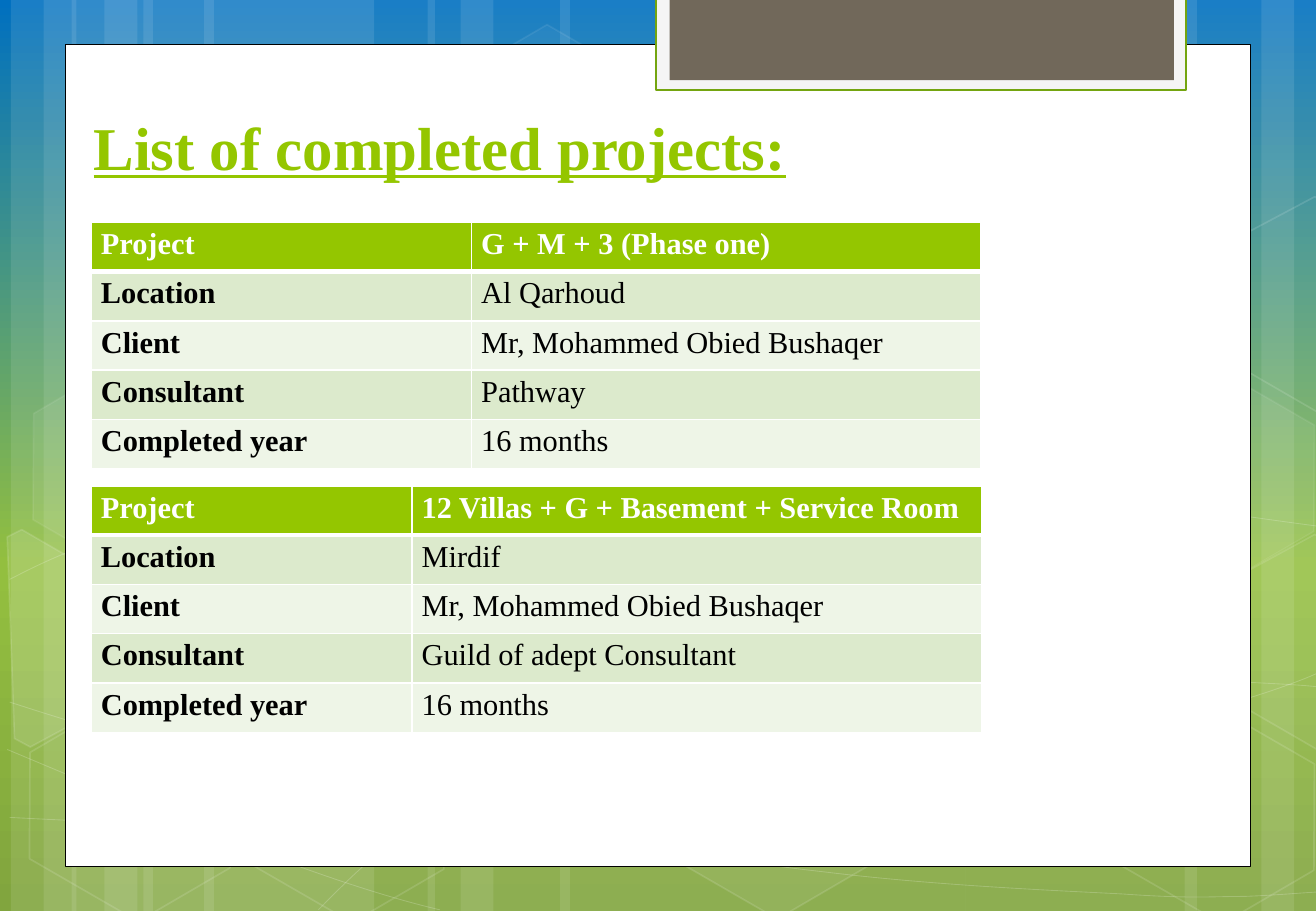
from copy import deepcopy
from dataclasses import dataclass

from lxml import etree
from pptx import Presentation
from pptx import util as u
from pptx.dml import color as dml
from pptx.enum import shapes, text
from pptx.oxml import ns

PX = 9144


@dataclass(frozen=True)
class Theme:
    font: str = "Times New Roman"
    title_size: int = 36
    table_size: int = 18
    accent: str = "94C600"
    ink: str = "000000"
    white: str = "FFFFFF"
    frame: str = "F5F5F5"
    frame_edge: str = "74A510"
    tab: str = "71685A"
    bands: tuple = ("EEF5E7", "DCEACC")
    sky: tuple = ((0, "0070C0"), (0.62, "93BF3F"), (1, "81A53E"))


def px(*values):
    return [value * PX for value in values]


class SlideMaker:
    def __init__(self, theme, page):
        self.theme = theme
        self.page = page

    def background(self):
        fill = self.page.background.fill
        fill.gradient()
        fill.gradient_angle = 270
        stops = self.page.element.xpath(".//a:gsLst")[0]
        stops.append(deepcopy(stops[-1]))
        for stop, (position, rgb) in zip(fill.gradient_stops, self.theme.sky):
            stop.position = position
            stop.color.rgb = dml.RGBColor.from_string(rgb)

    def paint(self, shape, fill=None, alpha=100, line=None, width=1, line_alpha=100):
        shape.shadow.inherit = False
        places = ((shape.fill, fill, alpha, "a:solidFill"),
                  (shape.line.fill, line, line_alpha, "a:ln/a:solidFill"))
        for paint, rgb, opacity, place in places:
            if rgb is None:
                paint.background()
                continue
            paint.solid()
            paint.fore_color.rgb = dml.RGBColor.from_string(rgb)
            if opacity < 100:
                node = shape.element.xpath(f"./p:spPr/{place}/a:srgbClr")[0]
                etree.SubElement(node, ns.qn("a:alpha"), val=str(opacity * 1000))
        if line:
            shape.line.width = u.Pt(width)

    def rectangle(self, bounds, **look):
        box = self.page.shapes.add_shape(shapes.MSO_SHAPE.RECTANGLE, *px(*bounds))
        self.paint(box, **look)

    def hexagon(self, left, top, **look):
        box = self.page.shapes.add_shape(shapes.MSO_SHAPE.HEXAGON, *px(left, top, 190, 152))
        box.adjustments[0] = 0.285
        box.rotation = 30
        self.paint(box, **look)

    def outline(self, points, close, **look):
        first, *rest = points
        builder = self.page.shapes.build_freeform(*first, scale=PX)
        builder.add_line_segments(rest, close=close)
        shape = builder.convert_to_shape()
        self.paint(shape, **look)
        return shape

    def curve(self, points, **look):
        shape = self.outline(points, False, **look)
        route = shape.element.xpath(".//a:path")[0]
        for index, step in enumerate(route.xpath("./a:lnTo")):
            if index % 3 == 0:
                bend = etree.SubElement(route, ns.qn("a:cubicBezTo"))
            bend.append(step[0])
            route.remove(step)

    def style(self, font, rgb, **values):
        for name, value in {"name": self.theme.font, **values}.items():
            setattr(font, name, value)
        font.color.rgb = dml.RGBColor.from_string(rgb)

    def title(self, words, bounds):
        box = self.page.shapes.title
        box.element.getparent().append(box.element)
        for name, value in zip(("left", "top", "width", "height"), px(*bounds)):
            setattr(box, name, value)
        frame = box.text_frame
        frame.text = words
        layout = {"vertical_anchor": text.MSO_ANCHOR.BOTTOM, "word_wrap": True,
                  "auto_size": text.MSO_AUTO_SIZE.NONE}
        for name, value in layout.items():
            setattr(frame, name, value)
        para = frame.paragraphs[0]
        para.alignment = text.PP_ALIGN.LEFT
        self.style(para.runs[0].font, self.theme.accent, size=u.Pt(self.theme.title_size),
                   bold=True, underline=True)

    def border(self, cell, row):
        thick = {"lnT": row == 1, "lnB": row == 0}
        for side in ("lnL", "lnR", "lnT", "lnB"):
            width = u.Pt(3 if thick.get(side) else 1)
            edge = etree.SubElement(cell._tc.get_or_add_tcPr(), ns.qn(f"a:{side}"), w=str(width))
            fill = etree.SubElement(edge, ns.qn("a:solidFill"))
            etree.SubElement(fill, ns.qn("a:srgbClr"), val=self.theme.white)

    def table(self, top, widths, rows):
        theme = self.theme
        table = self.page.shapes.add_table(len(rows), 2, *px(75, top, sum(widths), 203)).table
        table.first_row = table.horz_banding = False
        for column, width in zip(table.columns, px(*widths)):
            column.width = width
        for row, words in enumerate(rows):
            for column, word in enumerate(words):
                cell = table.cell(row, column)
                self.border(cell, row)
                cell.fill.solid()
                cell.fill.fore_color.rgb = dml.RGBColor.from_string(
                    theme.bands[row % 2] if row else theme.accent)
                for side, margin in zip(("left", "right", "top", "bottom"), px(8, 8, 0, 0)):
                    setattr(cell, f"margin_{side}", margin)
                cell.text = word
                para = cell.text_frame.paragraphs[0]
                para.line_spacing = 1.15
                self.style(para.runs[0].font, theme.ink if row else theme.white,
                           size=u.Pt(theme.table_size), bold=row == 0 or column == 0)


BARS = [(118, 190), (9, 54), (36, 90), (168, 190), (59, 54), (86, 90),
        (795, 190), (1038, 54), (975, 90), (461, 334), (352, 54), (379, 90)]

CURVES = [
    [(8, 673), (66, 676), (125, 679), (206, 678), (288, 677), (387, 675), (496, 665),
     (605, 655), (758, 636), (858, 617), (957, 598), (1058, 568), (1091, 551)],
    [(8, 477), (39, 461), (70, 446), (132, 431), (193, 416), (280, 394), (376, 387),
     (473, 380), (589, 379), (708, 387), (828, 395), (1026, 426), (1091, 434)],
    [(6, 617), (137, 672), (268, 727), (362, 749)],
    [(8, 578), (42, 589), (76, 600), (139, 616), (202, 631), (296, 656), (386, 673),
     (477, 690), (591, 708), (680, 718), (770, 729), (866, 733), (924, 736),
     (981, 740), (996, 738), (1024, 738), (1051, 737), (1071, 735), (1091, 734)],
    [(262, 749), (282, 729), (301, 709), (327, 691), (353, 673), (390, 653), (420, 639),
     (450, 625), (469, 619), (509, 609), (549, 599), (621, 585), (659, 578),
     (697, 571), (703, 571), (737, 569), (770, 566), (823, 563), (860, 562),
     (898, 561), (960, 562), (960, 562), (984, 562), (1008, 562), (1032, 562),
     (1052, 563), (1070, 564), (1080, 565), (1089, 566), (1086, 565), (1090, 566)],
]

HEXAGONS = [(362, 36, 4, 8), (538, 589, 6, 12), (12, 591, 0, 12), (15, 312, 7, 8),
            (188, 592, 0, 12), (816, 453, 10, 12), (904, 593, 0, 12), (904, 314, 7, 8)]

CUT_HEXAGONS = [
    (10, [(6, 442), (18, 436), (101, 484), (103, 573), (25, 615), (12, 608)]),
    (4, [(1003, 483), (1082, 440), (1090, 445), (1096, 616), (1089, 620), (1006, 572)]),
    (0, [(1003, 204), (1082, 162), (1091, 167), (1096, 338), (1089, 342), (1006, 294)]),
]

LABELS = ("Project", "Location", "Client", "Consultant", "Completed year")
PROJECTS = [
    (183, (313, 419), ("G + M + 3 (Phase one)", "Al Qarhoud", "Mr, Mohammed Obied Bushaqer",
                       "Pathway", "16 months")),
    (400, (264, 469), ("12 Villas + G + Basement + Service Room", "Mirdif",
                       "Mr, Mohammed Obied Bushaqer", "Guild of adept Consultant", "16 months")),
]


def main():
    deck = Presentation()
    deck.slide_width, deck.slide_height = px(1083, 750)
    theme = Theme()
    maker = SlideMaker(theme, deck.slides.add_slide(deck.slide_layouts[5]))
    maker.background()
    for left, width in BARS:
        maker.rectangle((left, 0, width, 750), fill=theme.white, alpha=10)
    for points in CURVES:
        maker.curve(points, line=theme.white, width=0.5, line_alpha=20)
    for left, top, alpha, line_alpha in HEXAGONS:
        maker.hexagon(left, top, fill=theme.white if alpha else None, alpha=alpha,
                      line=theme.white, line_alpha=line_alpha)
    for alpha, points in CUT_HEXAGONS:
        maker.outline(points, True, fill=theme.white if alpha else None, alpha=alpha,
                      line=theme.white, line_alpha=12)
    maker.rectangle((54, 37, 975, 676), fill=theme.white, line=theme.ink, width=0.5)
    maker.rectangle((540, -2, 436, 76), fill=theme.frame, line=theme.frame_edge, width=1.25)
    maker.rectangle((551, -2, 415, 68), fill=theme.tab)
    maker.title("List of completed projects:", (67, 76, 832, 79))
    for top, widths, values in PROJECTS:
        maker.table(top, widths, list(zip(LABELS, values)))
    deck.save("out.pptx")


if __name__ == "__main__":
    main()
